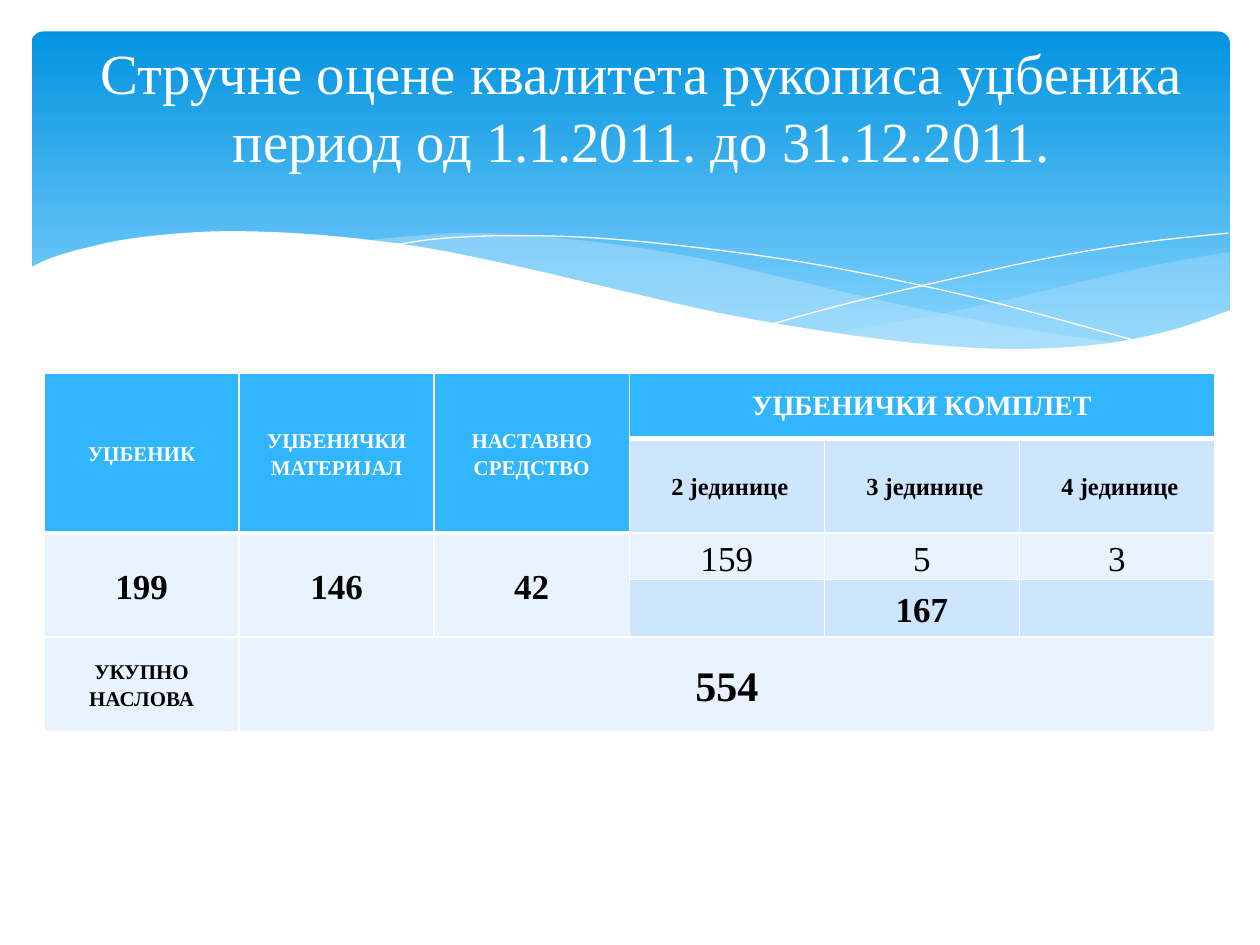
"""Build a slide with a wave banner, a title and a table of textbook reviews."""
from lxml.etree import SubElement
from pptx import Presentation
from pptx.dml.color import RGBColor
from pptx.enum.shapes import MSO_SHAPE
from pptx.enum.text import MSO_ANCHOR, PP_ALIGN, MSO_AUTO_SIZE
from pptx.oxml import parse_xml
from pptx.oxml.ns import nsdecls, qn
from pptx.util import Inches, Pt

FONT = "Times New Roman"
COLORS = {"white": "FFFFFF", "black": "000000", "top": "0293E0", "bottom": "83D3FE",
          "mist": "C6E7FC", "header": "31B6FD", "band": "CEE5FE", "pale": "E8F3FF"}
TITLE = "Стручне оцене квалитета рукописа уџбеника\vпериод од 1.1.2011. до 31.12.2011."

RIGHT_MIST = [
    [(9.76, 2), (9.35, 2.07), (8.91, 2.16), (8.32, 2.3), (7.53, 2.48), (6.61, 2.65)],
    [(6.61, 2.65), (7.05, 2.71), (7.57, 2.76), (8.14, 2.78), (8.72, 2.74), (9.28, 2.63), (9.76, 2.47)],
]
LEFT_MIST = [
    [(8.93, 2.73), (8.07, 2.6), (7.06, 2.4), (6.29, 2.22), (5.55, 2.05), (4.89, 1.94), (4.2, 1.87),
     (3.61, 1.85), (2.86, 1.91)],
    [(2.86, 1.91), (3.62, 2.03), (4.49, 2.22), (5.3, 2.4), (6.18, 2.58), (6.95, 2.7), (7.61, 2.77),
     (8.28, 2.78), (8.93, 2.73)],
]
FALLING_LINE = [[(3.09, 1.95), (3.53, 1.89), (4.16, 1.87), (4.89, 1.9), (5.82, 2), (6.65, 2.13),
                 (7.6, 2.33), (8.31, 2.51), (9.07, 2.72)]]
RISING_LINE = [[(6.13, 2.57), (6.72, 2.41), (7.48, 2.23), (8.36, 2.04), (9.1, 1.92), (9.75, 1.85)]]
WHITE_WAVE = [
    [(9.77, 2.46), (9.3, 2.62), (8.75, 2.73), (8.09, 2.77), (7.44, 2.74), (6.68, 2.65), (5.79, 2.5),
     (5.03, 2.33), (4.18, 2.13), (3.4, 1.97), (2.71, 1.88), (2.11, 1.84), (1.61, 1.84), (1.06, 1.89),
     (0.67, 1.97), (0.4, 2.05), (0.23, 2.13)],
    [(0.23, 3.29), (9.77, 3.29)],
]
WAVES = [(RIGHT_MIST, "mist", 29), (LEFT_MIST, "mist", 40), (FALLING_LINE, None, 100),
         (RISING_LINE, None, 100), (WHITE_WAVE, "white", 100)]

TABLE_BOX = (0.35, 2.96, 9.29, 2.76)
ROW_HEIGHTS = [0.52, 0.75, 0.37, 0.37, 0.75]
COLUMN_COUNT = 6
TIGHT, ROOMY = (0.07, 0), (0.1, 0.05)
STYLES = {
    "head": (12, True, "white", "header", TIGHT, 1.15),
    "group": (16, True, "white", "header", ROOMY, 1),
    "unit": (14, True, "black", "band", TIGHT, 1.15),
    "count": (20, True, "black", "pale", TIGHT, 1.15),
    "part": (20, False, "black", "pale", TIGHT, 1.15),
    "sum": (20, True, "black", "band", ROOMY, 1.15),
    "label": (12, True, "black", "pale", ROOMY, 1.15),
    "total": (24, True, "black", "pale", ROOMY, 1.15),
}
CELLS = [
    (0, 0, 2, 1, "head", "УЏБЕНИК"), (0, 1, 2, 1, "head", "УЏБЕНИЧКИ МАТЕРИЈАЛ"),
    (0, 2, 2, 1, "head", "НАСТАВНО СРЕДСТВО"), (0, 3, 1, 3, "group", "УЏБЕНИЧКИ КОМПЛЕТ"),
    (1, 3, 1, 1, "unit", " 2 јединице"), (1, 4, 1, 1, "unit", " 3 јединице"),
    (1, 5, 1, 1, "unit", " 4 јединице"),
    (2, 0, 2, 1, "count", "199"), (2, 1, 2, 1, "count", "146"), (2, 2, 2, 1, "count", "42"),
    (2, 3, 1, 1, "part", "159"), (2, 4, 1, 1, "part", "5"), (2, 5, 1, 1, "part", "3"),
    (3, 3, 1, 1, "sum", ""), (3, 4, 1, 1, "sum", "167"), (3, 5, 1, 1, "sum", ""),
    (4, 0, 1, 1, "label", "УКУПНО\nНАСЛОВА"), (4, 1, 1, 5, "total", "554"),
]


def rgb(name):
    return RGBColor.from_string(COLORS[name])


def smooth_curve(knots, steps=6):
    if len(knots) == 2:
        return knots
    padded = [knots[0], *knots, knots[-1]]
    points = [knots[0]]
    for a, b, c, d in zip(padded, padded[1:], padded[2:], padded[3:]):
        for step in range(1, steps + 1):
            t = step / steps
            points.append(tuple(
                (2 * q + (r - p) * t + (2 * p - 5 * q + 4 * r - s) * t ** 2
                 + (3 * q - p - 3 * r + s) * t ** 3) / 2
                for p, q, r, s in zip(a, b, c, d)))
    return points


def add_wave(page, curves, color, opacity):
    points = [(Inches(x), Inches(y)) for knots in curves for x, y in smooth_curve(knots)]
    builder = page.shapes.build_freeform(*points[0])
    builder.add_line_segments(points[1:], close=color is not None)
    wave = builder.convert_to_shape()
    wave.shadow.inherit = False
    if color is None:
        wave.fill.background()
        wave.line.color.rgb = rgb("white")
        wave.line.width = Pt(0)
        return
    wave.line.fill.background()
    wave.fill.solid()
    wave.fill.fore_color.rgb = rgb(color)
    if opacity < 100:
        tint = next(wave.element.iter(qn("a:srgbClr")))
        SubElement(tint, qn("a:alpha")).set("val", str(opacity * 1000))


def add_banner(page):
    banner = page.shapes.add_shape(MSO_SHAPE.ROUNDED_RECTANGLE, Inches(0.25), Inches(0.25),
                                   Inches(9.51), Inches(2.7))
    banner.adjustments[0] = 0.034
    banner.shadow.inherit = False
    banner.line.fill.background()
    banner.fill.gradient()
    banner.fill.gradient_angle = 270
    for stop, color, position in zip(banner.fill.gradient_stops, ("top", "bottom"), (0, 0.9)):
        stop.color.rgb = rgb(color)
        stop.position = position


def format_text(frame, size, bold, color, spacing):
    for para in frame.paragraphs:
        para.alignment = PP_ALIGN.CENTER
        para.line_spacing = spacing
        for span in para.runs:
            span.font.name = FONT
            span.font.size = Pt(size)
            span.font.bold = bold
            span.font.color.rgb = rgb(color)


def place_title(page):
    title = page.shapes.title
    title.left, title.top, title.width, title.height = map(Inches, (0.59, 0.6, 9, 1.02))
    frame = title.text_frame
    frame.text = TITLE
    frame.word_wrap = True
    frame.auto_size = MSO_AUTO_SIZE.NONE
    frame.vertical_anchor = MSO_ANCHOR.MIDDLE
    frame.margin_bottom = Inches(0.59)
    format_text(frame, 32.4, False, "white", 1)
    title.element.getparent().append(title.element)


def format_cell(cell, row, fill, margins):
    cell.fill.solid()
    cell.fill.fore_color.rgb = rgb(fill)
    cell.vertical_anchor = MSO_ANCHOR.MIDDLE
    cell.margin_left = cell.margin_right = Inches(margins[0])
    cell.margin_top = cell.margin_bottom = Inches(margins[1])
    sides = {"L": 1, "R": 1, "T": 1, "B": 3 if fill == "header" else 1}
    if row:
        del sides["T"]
    properties = cell._tc.get_or_add_tcPr()
    for index, (side, width) in enumerate(sides.items()):
        properties.insert(index, parse_xml(
            f'<a:ln{side} {nsdecls("a")} w="{Pt(width)}"><a:solidFill>'
            f'<a:srgbClr val="{COLORS["white"]}"/></a:solidFill></a:ln{side}>'))


def add_review_table(page):
    table = page.shapes.add_table(len(ROW_HEIGHTS), COLUMN_COUNT, *map(Inches, TABLE_BOX)).table
    for column in table.columns:
        column.width = Inches(TABLE_BOX[2] / COLUMN_COUNT)
    for row, height in zip(table.rows, ROW_HEIGHTS):
        row.height = Inches(height)
    for top, left, tall, wide, style, text in CELLS:
        size, bold, color, fill, margins, spacing = STYLES[style]
        origin = table.cell(top, left)
        if tall * wide > 1:
            origin.merge(table.cell(top + tall - 1, left + wide - 1))
        for row in range(top, top + tall):
            for column in range(left, left + wide):
                format_cell(table.cell(row, column), row, fill, margins)
        if text:
            origin.text_frame.text = text
            format_text(origin.text_frame, size, bold, color, spacing)


def main():
    deck = Presentation()
    deck.slide_width, deck.slide_height = Inches(10), Inches(7.5)
    page = deck.slides.add_slide(deck.slide_layouts[5])
    add_banner(page)
    for wave in WAVES:
        add_wave(page, *wave)
    place_title(page)
    add_review_table(page)
    deck.save("out.pptx")


if __name__ == "__main__":
    main()
